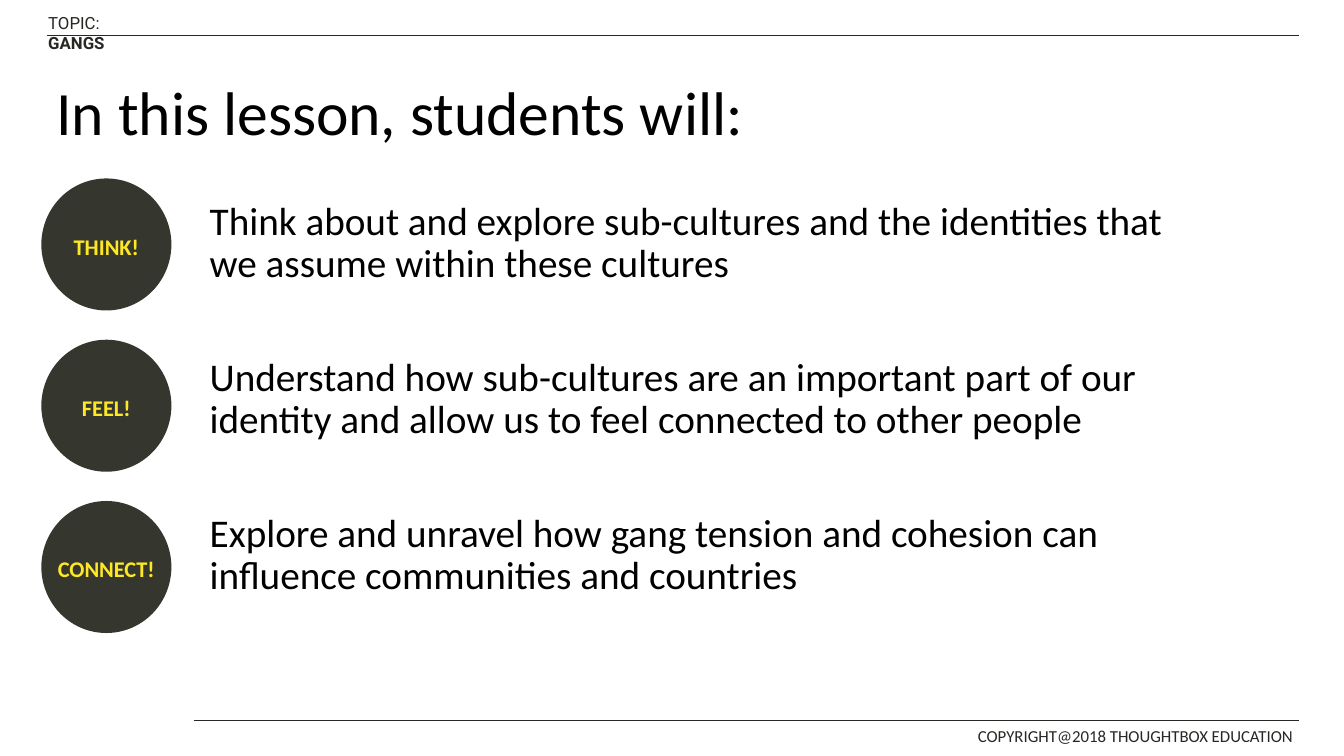
from dataclasses import dataclass

from pptx import Presentation
from pptx.dml.color import RGBColor as Rgb
from pptx.enum.shapes import MSO_CONNECTOR as Conn, MSO_SHAPE as Shape
from pptx.enum.text import MSO_ANCHOR as Anchor, MSO_AUTO_SIZE as Fit, PP_ALIGN as Align
from pptx.oxml.ns import qn
from pptx.slide import Slide
from pptx.util import Inches, Pt


@dataclass(frozen=True)
class Theme:
    face: str = "Calibri"
    tag_face: str = "Roboto"
    ink: Rgb = Rgb.from_string("000000")
    rule: Rgb = Rgb.from_string("252823")
    disc: Rgb = Rgb.from_string("35372F")
    glow: Rgb = Rgb.from_string("FEE725")
    title: int = 44
    body: int = 28
    label: int = 16
    small: int = 12


@dataclass(frozen=True)
class Box:
    left: float
    top: float
    width: float
    height: float

    def lengths(self) -> list[int]:
        return [Inches(v) for v in (self.left, self.top, self.width, self.height)]


@dataclass(frozen=True)
class Goal:
    label: str
    text: str


@dataclass(frozen=True)
class Rule:
    left: float
    right: float
    top: float


THEME = Theme()
TITLE = Box(0.46, 0.5, 12.42, 1.3)
BODY = Box(1.98, 1.95, 10.07, 4.76)
DISC = Box(0.41, 1.77, 1.29, 1.31)
TOPIC = Box(0.38, 0.08, 1.23, 0.5)
RIGHTS = Box(9.6, 7.15, 3.4, 0.31)
STEP = 1.6
RULES = [Rule(0.47, 12.88, 0.35), Rule(1.92, 12.88, 7.15)]
GOALS = [
    Goal("THINK!", "Think about and explore sub-cultures and the identities "
         "that we assume within these cultures"),
    Goal("FEEL!", "Understand how sub-cultures are an important part of our "
         "identity and allow us to feel connected to other people"),
    Goal("CONNECT!", "Explore and unravel how gang tension and cohesion can "
         "influence communities and countries"),
]


def style(para, size: int, color: Rgb, face: str = THEME.face, bold: bool | None = None) -> None:
    font = para.font
    font.name, font.size, font.bold = face, Pt(size), bold
    font.color.rgb = color


def place(shape, box: Box) -> None:
    shape.left, shape.top, shape.width, shape.height = box.lengths()


def add_title(slide: Slide, text: str) -> None:
    title = slide.shapes.title
    place(title, TITLE)
    frame = title.text_frame
    frame.text = text
    frame.auto_size = Fit.NONE
    frame.vertical_anchor = Anchor.MIDDLE
    para = frame.paragraphs[0]
    para.alignment, para.line_spacing = Align.LEFT, 0.9
    style(para, THEME.title, THEME.ink)


def add_goals(slide: Slide) -> None:
    body = slide.placeholders[1]
    place(body, BODY)
    frame = body.text_frame
    frame.text = "\n".join(goal.text for goal in GOALS)
    frame.auto_size = Fit.NONE
    for row, para in enumerate(frame.paragraphs):
        props = para._p.get_or_add_pPr()
        props.set("marL", "0")
        props.set("indent", "0")
        props.append(props.makeelement(qn("a:buNone"), {}))
        para.line_spacing = 0.9
        para.space_before = Pt(51 if row else 0)
        style(para, THEME.body, THEME.ink)


def add_disc(slide: Slide, row: int, label: str) -> None:
    box = Box(DISC.left, DISC.top + row * STEP, DISC.width, DISC.height)
    disc = slide.shapes.add_shape(Shape.OVAL, *box.lengths())
    disc.shadow.inherit = False
    disc.fill.solid()
    disc.fill.fore_color.rgb = THEME.disc
    disc.line.fill.background()
    frame = disc.text_frame
    frame.text = label
    frame.word_wrap = False
    frame.vertical_anchor = Anchor.MIDDLE
    para = frame.paragraphs[0]
    para.alignment, para.line_spacing = Align.CENTER, 1.15
    style(para, THEME.label, THEME.glow, bold=True)


def add_note(slide: Slide, box: Box, face: str, plain: str, strong: str = "") -> None:
    """Add small edge text, with an optional bold ending."""
    frame = slide.shapes.add_textbox(*box.lengths()).text_frame
    frame.word_wrap = True
    para = frame.paragraphs[0]
    style(para, THEME.small, THEME.rule, face)
    para.add_run().text = plain
    if strong:
        run = para.add_run()
        run.text = strong
        run.font.bold = True


def add_rule(slide: Slide, rule: Rule) -> None:
    top = Inches(rule.top)
    line = slide.shapes.add_connector(
        Conn.STRAIGHT, Inches(rule.left), top, Inches(rule.right), top)
    line.line.color.rgb = THEME.rule
    line.line.width = Pt(1)
    props = line._element.spPr
    props.append(props.makeelement(qn("a:effectLst"), {}))


def main() -> None:
    deck = Presentation()
    deck.slide_width, deck.slide_height = Inches(13.33), Inches(7.5)
    slide = deck.slides.add_slide(deck.slide_layouts[1])
    add_note(slide, TOPIC, THEME.tag_face, "TOPIC: ", "GANGS")
    add_note(slide, RIGHTS, THEME.face, "COPYRIGHT@2018 THOUGHTBOX EDUCATION")
    for rule in RULES:
        add_rule(slide, rule)
    add_title(slide, "In this lesson, students will:")
    add_goals(slide)
    for row, goal in enumerate(GOALS):
        add_disc(slide, row, goal.label)
    deck.save("out.pptx")


if __name__ == "__main__":
    main()
